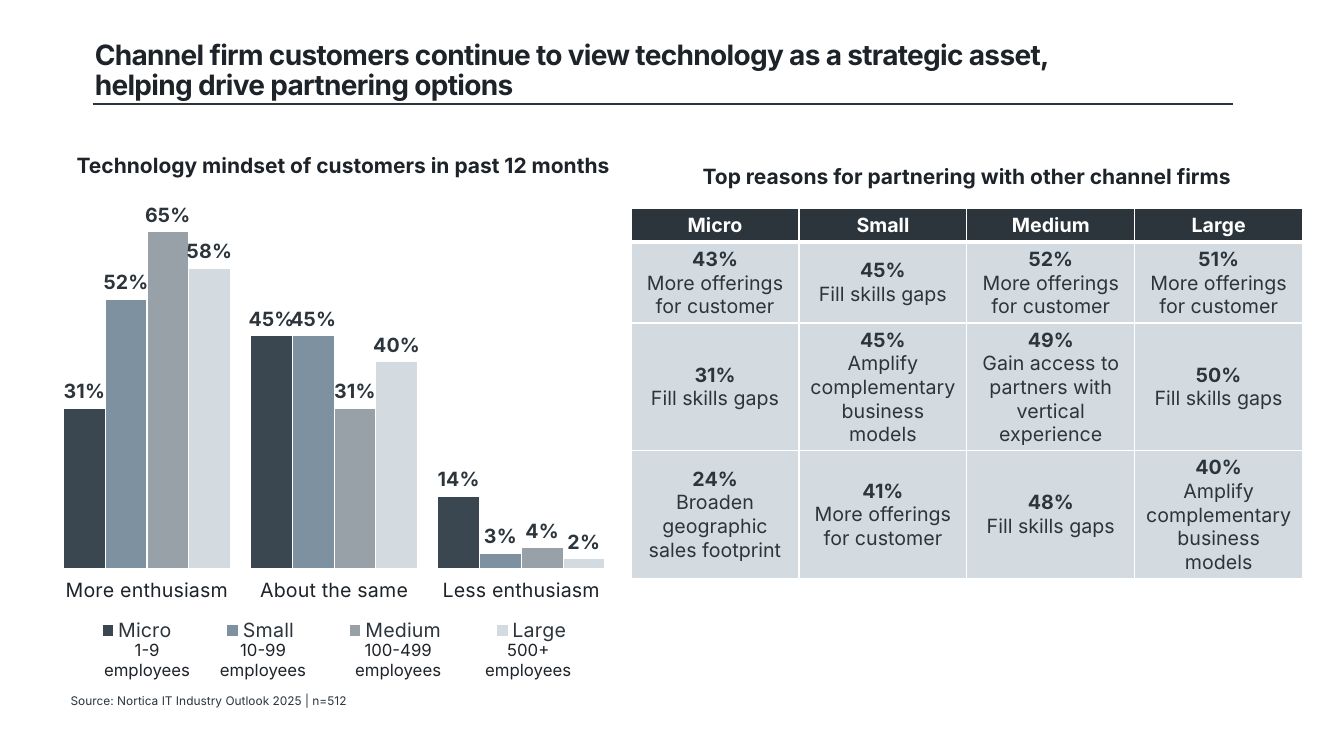
from dataclasses import dataclass

from lxml import etree
from pptx import Presentation
from pptx.chart.data import CategoryChartData
from pptx.dml.color import RGBColor
from pptx.enum import chart as ch, text as tx
from pptx.oxml import ns
from pptx.util import Inches, Pt

FONT = "Inter"
INK, SLATE, WHITE, PALE = "1D2328", "2C353C", "FFFFFF", "D3DBE0"


@dataclass
class FirmSize:
    name: str
    employees: str
    label_left: float
    color: str
    mindset: tuple[float, ...]
    reasons: tuple[tuple[str, str], ...]


OFFERINGS = "More offerings for customer"
SKILLS = "Fill skills gaps"
AMPLIFY = "Amplify complementary business models"
MINDSETS = ("More enthusiasm", "About the same", "Less enthusiasm")
FIRM_SIZES = (
    FirmSize("Micro", "1-9 employees", 0.91, "3A4650", (0.31, 0.45, 0.14),
             (("43%", OFFERINGS), ("31%", SKILLS),
              ("24%", "Broaden geographic sales footprint"))),
    FirmSize("Small", "10-99 employees", 2.06, "7E91A1", (0.52, 0.45, 0.03),
             (("45%", SKILLS), ("45%", AMPLIFY), ("41%", OFFERINGS))),
    FirmSize("Medium", "100-499 employees", 3.4, "98A0A8", (0.65, 0.31, 0.04),
             (("52%", OFFERINGS),
              ("49%", "Gain access to partners with vertical experience"),
              ("48%", SKILLS))),
    FirmSize("Large", "500+ employees", 4.69, PALE, (0.58, 0.4, 0.02),
             (("51%", OFFERINGS), ("50%", SKILLS), ("40%", AMPLIFY))),
)


def rgb(value: str) -> RGBColor:
    return RGBColor.from_string(value)


def style_font(font, size: float, color: str, bold: bool = False) -> None:
    font.name, font.size, font.bold = FONT, Pt(size), bold
    font.color.rgb = rgb(color)


def add_text(slide, box: tuple[float, ...], wording: str, size: float,
             color: str = INK, bold: bool = False, align=tx.PP_ALIGN.CENTER):
    frame = slide.shapes.add_textbox(*map(Inches, box)).text_frame
    frame.word_wrap = True
    frame.text = wording
    paragraph = frame.paragraphs[0]
    paragraph.alignment = align
    style_font(paragraph.runs[0].font, size, color, bold)
    return frame


def add_title(slide) -> None:
    title = slide.shapes.title
    title.left, title.top, title.width, title.height = map(
        Inches, (0.84, 0.36, 10.16, 0.7))
    frame = title.text_frame
    frame.text = ("Channel firm customers continue to view technology as a "
                  "strategic asset, helping drive partnering options")
    frame.word_wrap = True
    frame.auto_size = tx.MSO_AUTO_SIZE.NONE
    frame.vertical_anchor = tx.MSO_ANCHOR.MIDDLE
    paragraph = frame.paragraphs[0]
    paragraph.alignment = tx.PP_ALIGN.LEFT
    paragraph.line_spacing = 0.9
    font = paragraph.runs[0].font
    style_font(font, 20, INK, True)
    paragraph.runs[0]._r.get_or_add_rPr().set("spc", "-50")

    rule = slide.shapes.add_connector(
        1, Inches(0.92), Inches(1.03), Inches(12.23), Inches(1.03))
    rule.line.color.rgb = rgb(SLATE)
    rule.line.width = Pt(1)
    etree.SubElement(rule._element.spPr, ns.qn("a:effectLst"))


def set_layout(parent, index: int, inner: bool, **fractions: float) -> None:
    """Fix the place of a chart part, in fractions of the chart's size."""
    for old in parent.findall(ns.qn("c:layout")):
        parent.remove(old)
    layout = etree.Element(ns.qn("c:layout"))
    manual = etree.SubElement(layout, ns.qn("c:manualLayout"))
    settings = {"layoutTarget": "inner"} if inner else {}
    settings |= {"xMode": "edge", "yMode": "edge"} | fractions
    for tag, value in settings.items():
        etree.SubElement(manual, ns.qn(f"c:{tag}")).set("val", str(value))
    parent.insert(index, layout)


def add_mindset_chart(slide) -> None:
    data = CategoryChartData(number_format="0%")
    data.categories = MINDSETS
    for firm in FIRM_SIZES:
        data.add_series(firm.name, firm.mindset)
    chart = slide.shapes.add_chart(
        ch.XL_CHART_TYPE.COLUMN_CLUSTERED,
        *map(Inches, (0.53, 2.01, 5.57, 4.54)), data).chart
    chart.has_title = False
    style_font(chart.font, 14, SLATE)

    values = chart.value_axis
    values.minimum_scale, values.maximum_scale = 0, 0.68
    values.has_major_gridlines = False
    values.visible = False
    categories = chart.category_axis
    categories.format.line.fill.background()
    style_font(categories.tick_labels.font, 14, INK)

    plot = chart.plots[0]
    plot.gap_width, plot.overlap = 49, 0
    plot.vary_by_categories = False
    for firm, series in zip(FIRM_SIZES, plot.series):
        series.format.fill.solid()
        series.format.fill.fore_color.rgb = rgb(firm.color)
        series.format.line.color.rgb = rgb(WHITE)
        series.format.line.width = Pt(0.75)
        labels = series.data_labels
        labels.show_value = True
        labels.number_format, labels.number_format_is_linked = "0%", False
        labels.position = ch.XL_LABEL_POSITION.OUTSIDE_END
        style_font(labels.font, 14, SLATE, True)

    chart.has_legend = True
    legend = chart.legend
    legend.position = ch.XL_LEGEND_POSITION.BOTTOM
    legend.include_in_layout = False
    style_font(legend.font, 14, SLATE)
    set_layout(legend._element, 1, False, x=0, y=0.9, w=1, h=0.07)
    plot_area = chart._chartSpace.chart.plotArea
    set_layout(plot_area, 0, True, x=0, y=0.03, w=1, h=0.77)


def fill_cell(cell, lines: tuple[str, ...], fill: str, color: str,
              bottom: float) -> None:
    """Write the first line bold, and draw white borders round the cell."""
    cell.fill.solid()
    cell.fill.fore_color.rgb = rgb(fill)
    cell.vertical_anchor = tx.MSO_ANCHOR.MIDDLE
    cell.text_frame.text = "\n".join(lines)
    for number, paragraph in enumerate(cell.text_frame.paragraphs):
        paragraph.alignment = tx.PP_ALIGN.CENTER
        style_font(paragraph.runs[0].font, 14, color, number == 0)
    properties = cell._tc.get_or_add_tcPr()
    for index, (side, width) in enumerate(
            (("L", 1), ("R", 1), ("T", 1), ("B", bottom))):
        border = etree.Element(ns.qn(f"a:ln{side}"), w=str(Pt(width)))
        solid = etree.SubElement(border, ns.qn("a:solidFill"))
        etree.SubElement(solid, ns.qn("a:srgbClr"), val=WHITE)
        properties.insert(index, border)


def add_reasons_table(slide) -> None:
    heights = (0.29, 0.77, 0.95, 0.95)
    table = slide.shapes.add_table(
        len(heights), len(FIRM_SIZES),
        *map(Inches, (6.26, 2.07, 6.66, sum(heights)))).table
    for row, height in zip(table.rows, heights):
        row.height = Inches(height)
    for column, firm in enumerate(FIRM_SIZES):
        fill_cell(table.cell(0, column), (firm.name,), SLATE, WHITE, 3)
        for row, reason in enumerate(firm.reasons, 1):
            fill_cell(table.cell(row, column), reason, PALE, SLATE, 1)


def main() -> None:
    deck = Presentation()
    deck.slide_width, deck.slide_height = Inches(13.33), Inches(7.5)
    slide = deck.slides.add_slide(deck.slide_layouts.get_by_name("Title Only"))
    add_title(slide)
    source = add_text(slide, (0.7, 6.85, 7, 0.2),
                      "Source: Nortica IT Industry Outlook 2025 | n=512",
                      8.5, SLATE, align=tx.PP_ALIGN.LEFT)
    source.margin_left = source.margin_right = 0
    source.margin_top = source.margin_bottom = 0
    source.vertical_anchor = tx.MSO_ANCHOR.MIDDLE
    add_mindset_chart(slide)
    add_text(slide, (0.53, 1.46, 5.75, 0.35),
             "Technology mindset of customers in past 12 months", 15, bold=True)
    for firm in FIRM_SIZES:
        add_text(slide, (firm.label_left, 6.3, 1.1, 0.5), firm.employees, 12)
    add_reasons_table(slide)
    add_text(slide, (6.74, 1.57, 5.7, 0.35),
             "Top reasons for partnering with other channel firms", 15, bold=True)
    deck.save("out.pptx")


if __name__ == "__main__":
    main()
